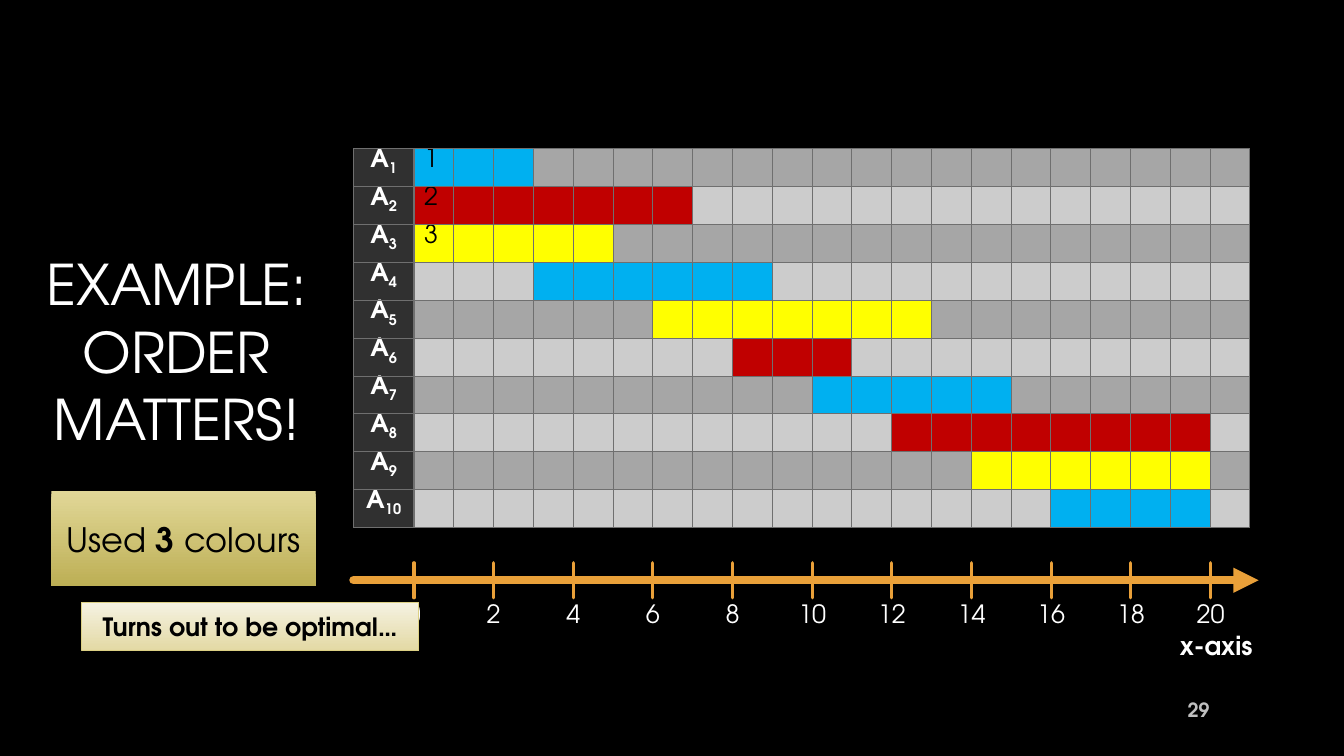
from lxml import etree
from pptx import Presentation
from pptx.dml.color import RGBColor
from pptx.enum.shapes import MSO_CONNECTOR, MSO_SHAPE
from pptx.enum.text import MSO_ANCHOR, PP_ALIGN
from pptx.oxml.ns import qn
from pptx.util import Pt

LEFT, CENTER, RIGHT = PP_ALIGN.LEFT, PP_ALIGN.CENTER, PP_ALIGN.RIGHT
TOP, MIDDLE = MSO_ANCHOR.TOP, MSO_ANCHOR.MIDDLE
STRAIGHT, RECTANGLE = MSO_CONNECTOR.STRAIGHT, MSO_SHAPE.RECTANGLE
FONT = "TeX Gyre Adventor"
COLORS = {
    "background": "000000", "white": "FFFFFF", "black": "000000", "number": "BFBFBF",
    "blue": "00B0F0", "red": "C00000", "yellow": "FFFF00",
    "header": "303030", "odd": "A6A6A6", "even": "CCCCCC", "border": "6F6F6F",
    "axis": "E9A039", "gold_top": "E1D797", "gold_bottom": "BDAF55",
    "cream_top": "F5F2E2", "cream_bottom": "E3D9A4", "cream_line": "DCD084",
}
# Each activity: start, end, colour
ACTIVITIES = [
    (0, 3, "blue"), (0, 7, "red"), (0, 5, "yellow"), (3, 9, "blue"),
    (6, 13, "yellow"), (8, 11, "red"), (10, 15, "blue"), (12, 20, "red"),
    (14, 20, "yellow"), (16, 20, "blue"),
]
UNITS = 21
UNIT_WIDTH = 28.45
LABEL_WIDTH = 43.2
ROW_HEIGHT = 27.07


def color(name):
    return RGBColor.from_string(COLORS[name])


def add_run(paragraph, text, size, color_name, bold=False, baseline=None):
    run = paragraph.add_run()
    run.text = text
    values = {"name": FONT, "size": Pt(size), "bold": bold}
    for attribute, value in values.items():
        setattr(run.font, attribute, value)
    run.font.color.rgb = color(color_name)
    if baseline:
        run._r.get_or_add_rPr().set("baseline", str(baseline))


def fill_frame(frame, runs, size, color_name, align, anchor, wrap=True):
    values = {"word_wrap": wrap, "vertical_anchor": anchor}
    for attribute, value in values.items():
        setattr(frame, attribute, value)
    paragraph = frame.paragraphs[0]
    paragraph.alignment = align
    for text, bold in runs:
        add_run(paragraph, text, size, color_name, bold)
    return paragraph


def add_text(slide, box, runs, size, color_name, align=CENTER, anchor=TOP, wrap=True):
    shape = slide.shapes.add_textbox(*map(Pt, box))
    return fill_frame(shape.text_frame, runs, size, color_name, align, anchor, wrap)


def add_title(slide, box):
    paragraph = add_text(slide, box, [("EXAMPLE:", False)], 40, "white", anchor=MIDDLE)
    paragraph.add_line_break()
    add_run(paragraph, "ORDER MATTERS!", 40, "white")


def add_note(slide, box, runs, size, gradient, line_name=None):
    shape = slide.shapes.add_shape(RECTANGLE, *map(Pt, box))
    shape.shadow.inherit = False
    shape.fill.gradient()
    shape.fill.gradient_angle = 270
    for stop, name, position in zip(shape.fill.gradient_stops, gradient, (0, 1)):
        stop.color.rgb = color(name)
        stop.position = position
    if line_name:
        shape.line.color.rgb = color(line_name)
        shape.line.width = Pt(0.75)
    else:
        shape.line.fill.background()
    fill_frame(shape.text_frame, runs, size, "black", CENTER, MIDDLE)


def format_cell(cell, fill_name, right_width=0.75):
    cell.margin_top = cell.margin_bottom = 0
    cell.fill.solid()
    cell.fill.fore_color.rgb = color(fill_name)
    properties = cell._tc.get_or_add_tcPr()
    for index, side in enumerate(("lnL", "lnR", "lnT", "lnB")):
        width = right_width if side == "lnR" else 0.75
        border = etree.Element(qn("a:" + side), w=str(Pt(width)))
        solid = etree.SubElement(border, qn("a:solidFill"))
        etree.SubElement(solid, qn("a:srgbClr"), val=COLORS["border"])
        properties.insert(index, border)


def add_schedule(slide, left, top):
    row_count = len(ACTIVITIES)
    width = LABEL_WIDTH + UNITS * UNIT_WIDTH
    table = slide.shapes.add_table(
        row_count, UNITS + 1, Pt(left), Pt(top), Pt(width), Pt(row_count * ROW_HEIGHT)).table
    for index, column in enumerate(table.columns):
        column.width = Pt(UNIT_WIDTH if index else LABEL_WIDTH)
    for number, (start, end, color_name) in enumerate(ACTIVITIES, 1):
        row = table.rows[number - 1]
        row.height = Pt(ROW_HEIGHT)
        # Activity label
        label = row.cells[0]
        format_cell(label, "header", 1.5)
        paragraph = label.text_frame.paragraphs[0]
        paragraph.alignment = CENTER
        add_run(paragraph, "A", 18, "white", True)
        add_run(paragraph, str(number), 18, "white", True, -25000)
        # Time units
        band = "odd" if number % 2 else "even"
        for unit in range(UNITS):
            cell = row.cells[unit + 1]
            format_cell(cell, color_name if start <= unit < end else band)
            paragraph = cell.text_frame.paragraphs[0]
            if unit == 0 and start == 0:
                add_run(paragraph, str(number), 18, "black")
            else:
                etree.SubElement(paragraph._p, qn("a:endParaRPr"), sz="1200")


def add_line(slide, start, end, width, arrow=False):
    line = slide.shapes.add_connector(STRAIGHT, *map(Pt, start + end))
    line.line.color.rgb = color("axis")
    line.line.width = Pt(width)
    properties = line.line._get_or_add_ln()
    properties.set("cap", "rnd")
    if arrow:
        etree.SubElement(properties, qn("a:tailEnd"), type="triangle")
    etree.SubElement(line._element.spPr, qn("a:effectLst"))


def add_axis(slide, left, y, width):
    add_line(slide, (left, y), (left + width, y), 6, arrow=True)
    add_text(slide, (left + 583.2, y + 32.4, 67, 28.8), [("x-axis", True)], 18, "white",
             LEFT, wrap=False)
    for value in range(0, UNITS, 2):
        x = left + LABEL_WIDTH + value * UNIT_WIDTH
        add_line(slide, (x, y - 12.5), (x, y + 12.5), 2.25)
        add_text(slide, (x - 28, y + 9.4, 56, 28.8), [(str(value), False)], 18, "white")


def build_slide(presentation):
    slide = presentation.slides.add_slide(presentation.slide_layouts[6])
    slide.background.fill.solid()
    slide.background.fill.fore_color.rgb = color("background")
    add_title(slide, (10, 106.5, 232.5, 288))
    add_schedule(slide, 252.5, 106.3)
    add_axis(slide, 252.5, 414.5, 646.5)
    # Conclusions
    add_note(slide, (36.8, 351, 188.8, 67.5),
             [("Used ", False), ("3 ", True), ("colours", False)], 24,
             ("gold_top", "gold_bottom"))
    add_note(slide, (58.5, 430.3, 240.5, 34.5), [("Turns out to be optimal…", True)], 18,
             ("cream_top", "cream_bottom"), "cream_line")
    # Slide number
    add_text(slide, (828, 492.5, 43.2, 28.8), [("29", True)], 14, "number", RIGHT, MIDDLE)


def main():
    presentation = Presentation()
    presentation.slide_width, presentation.slide_height = Pt(960), Pt(540)
    build_slide(presentation)
    presentation.save("out.pptx")


if __name__ == "__main__":
    main()
